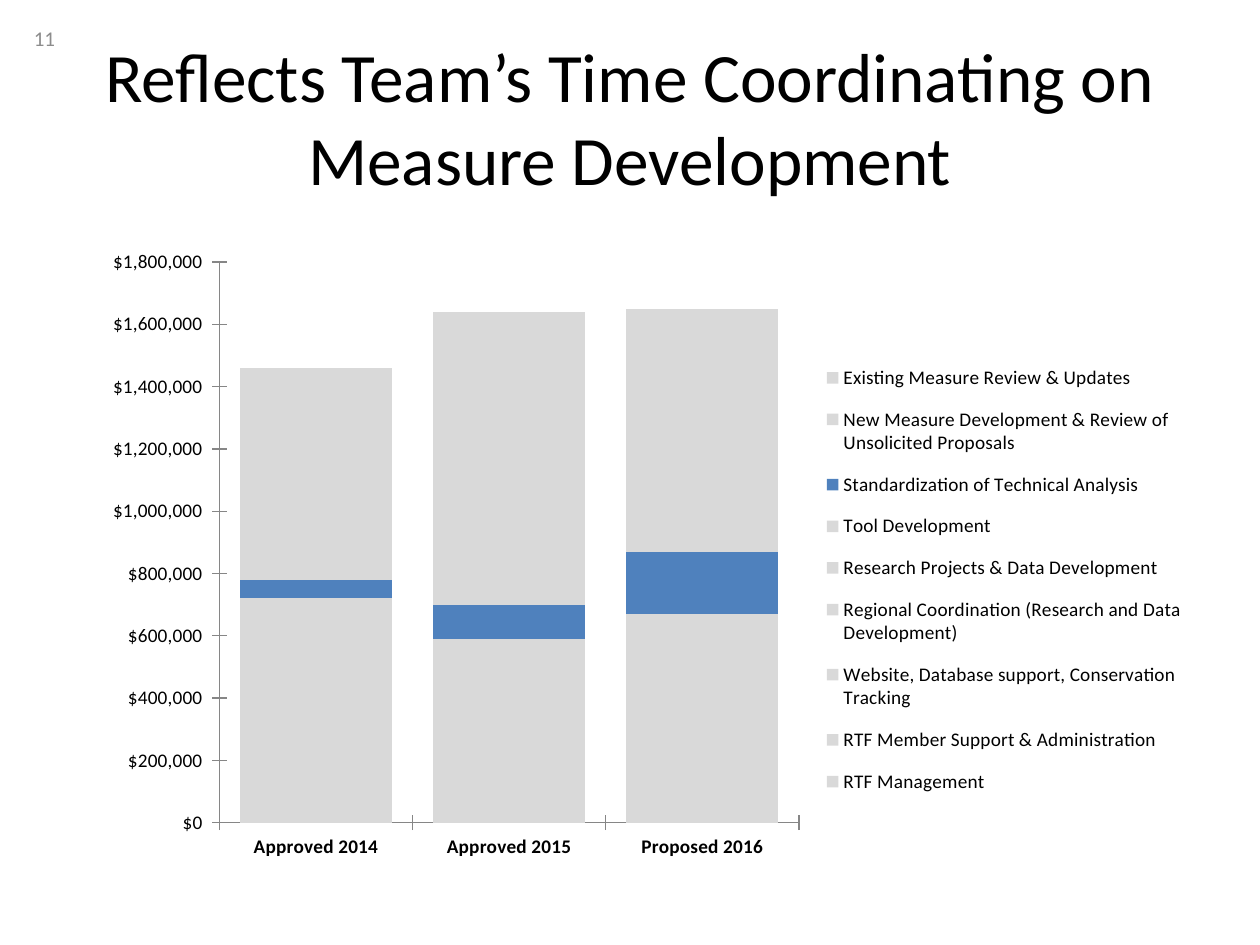
from lxml.etree import SubElement
from pptx import Presentation
from pptx.chart.data import CategoryChartData
from pptx.dml.color import RGBColor
from pptx.enum.chart import XL_CHART_TYPE as ChartType
from pptx.enum.chart import XL_LEGEND_POSITION as LegendPosition
from pptx.enum.chart import XL_TICK_MARK as TickMark
from pptx.enum.text import MSO_ANCHOR as Anchor
from pptx.enum.text import PP_ALIGN as Align
from pptx.oxml.ns import qn
from pptx.util import Pt

COLORS = {
    "text": "000000",
    "number": "8C8C8C",
    "axis": "868686",
    "muted": "D9D9D9",
    "focus": "4F81BD",
}
FONT = "Calibri"
FOCUS = "Standardization of Technical Analysis"
YEARS = ["Approved 2014", "Approved 2015", "Proposed 2016"]
BUDGET = {
    "RTF Management": (200000, 130000, 140000),
    "RTF Member Support & Administration": (140000, 150000, 230000),
    "Website, Database support, Conservation Tracking": (60000, 40000, 80000),
    "Regional Coordination (Research and Data Development)": (20000, 140000, 150000),
    "Research Projects & Data Development": (120000, 40000, 0),
    "Tool Development": (180000, 90000, 70000),
    FOCUS: (60000, 110000, 200000),
    "New Measure Development & Review of Unsolicited Proposals": (200000, 400000, 330000),
    "Existing Measure Review & Updates": (480000, 540000, 450000),
}


def color(name):
    return RGBColor.from_string(COLORS[name])


def style_font(font, size, name="text", bold=False):
    font.name = FONT
    font.size = Pt(size)
    font.bold = bold
    font.color.rgb = color(name)


def add_text(page, box, text, size, name, align):
    frame = page.shapes.add_textbox(*map(Pt, box)).text_frame
    frame.word_wrap = True
    frame.vertical_anchor = Anchor.MIDDLE
    para = frame.paragraphs[0]
    para.text = text
    para.alignment = align
    style_font(para.font, size, name)


def set_layout(parent, before, area, inner=False):
    for old in parent.findall(qn("c:layout")):
        parent.remove(old)
    layout = SubElement(parent, qn("c:layout"))
    parent.find(qn(before)).addprevious(layout)
    manual = SubElement(layout, qn("c:manualLayout"))
    entries = [("layoutTarget", "inner")] if inner else []
    entries += [("xMode", "edge"), ("yMode", "edge")]
    entries += zip("xywh", area)
    for tag, value in entries:
        SubElement(manual, qn(f"c:{tag}")).set("val", str(value))


def style_axis(axis, bold):
    axis.has_major_gridlines = False
    axis.major_tick_mark = TickMark.CROSS
    axis.format.line.color.rgb = color("axis")
    axis.format.line.width = Pt(0.75)
    style_font(axis.tick_labels.font, 11, bold=bold)


def add_budget_chart(page, box):
    data = CategoryChartData()
    data.categories = YEARS
    for name, values in BUDGET.items():
        data.add_series(name, values)
    frame = page.shapes.add_chart(ChartType.COLUMN_STACKED, *map(Pt, box), data)
    chart = frame.chart
    chart.has_title = False
    style_font(chart.font, 10)

    plot = chart.plots[0]
    plot.gap_width = 27
    plot.overlap = 100
    plot.vary_by_categories = False
    for series in plot.series:
        series.format.fill.solid()
        series.format.fill.fore_color.rgb = color("focus" if series.name == FOCUS else "muted")

    style_axis(chart.category_axis, True)
    values = chart.value_axis
    style_axis(values, False)
    values.minimum_scale = 0
    values.maximum_scale = 1800000
    values.major_unit = 200000
    values.tick_labels.number_format = '"$"#,##0_);\\("$"#,##0\\)'
    values.tick_labels.number_format_is_linked = False

    chart.has_legend = True
    legend = chart.legend
    legend.position = LegendPosition.RIGHT
    legend.include_in_layout = False
    style_font(legend.font, 11)

    area = chart.element.find(".//" + qn("c:plotArea"))
    set_layout(area, "c:barChart", (0.138, 0.062, 0.511, 0.835), inner=True)
    key = chart.element.find(".//" + qn("c:legend"))
    set_layout(key, "c:overlay", (0.67, 0.19, 0.32, 0.69))


def main():
    deck = Presentation()
    deck.slide_width, deck.slide_height = Pt(720), Pt(540)
    page = deck.slides.add_slide(deck.slide_layouts[6])
    title = "Reflects Team’s Time Coordinating on Measure Development"
    add_text(page, (36, 21.6, 648, 90), title, 39.6, "text", Align.CENTER)
    add_text(page, (12.24, 7.2, 167.76, 28.8), "11", 12, "number", Align.LEFT)
    add_budget_chart(page, (36, 126, 648, 383.76))
    deck.save("out.pptx")


if __name__ == "__main__":
    main()
